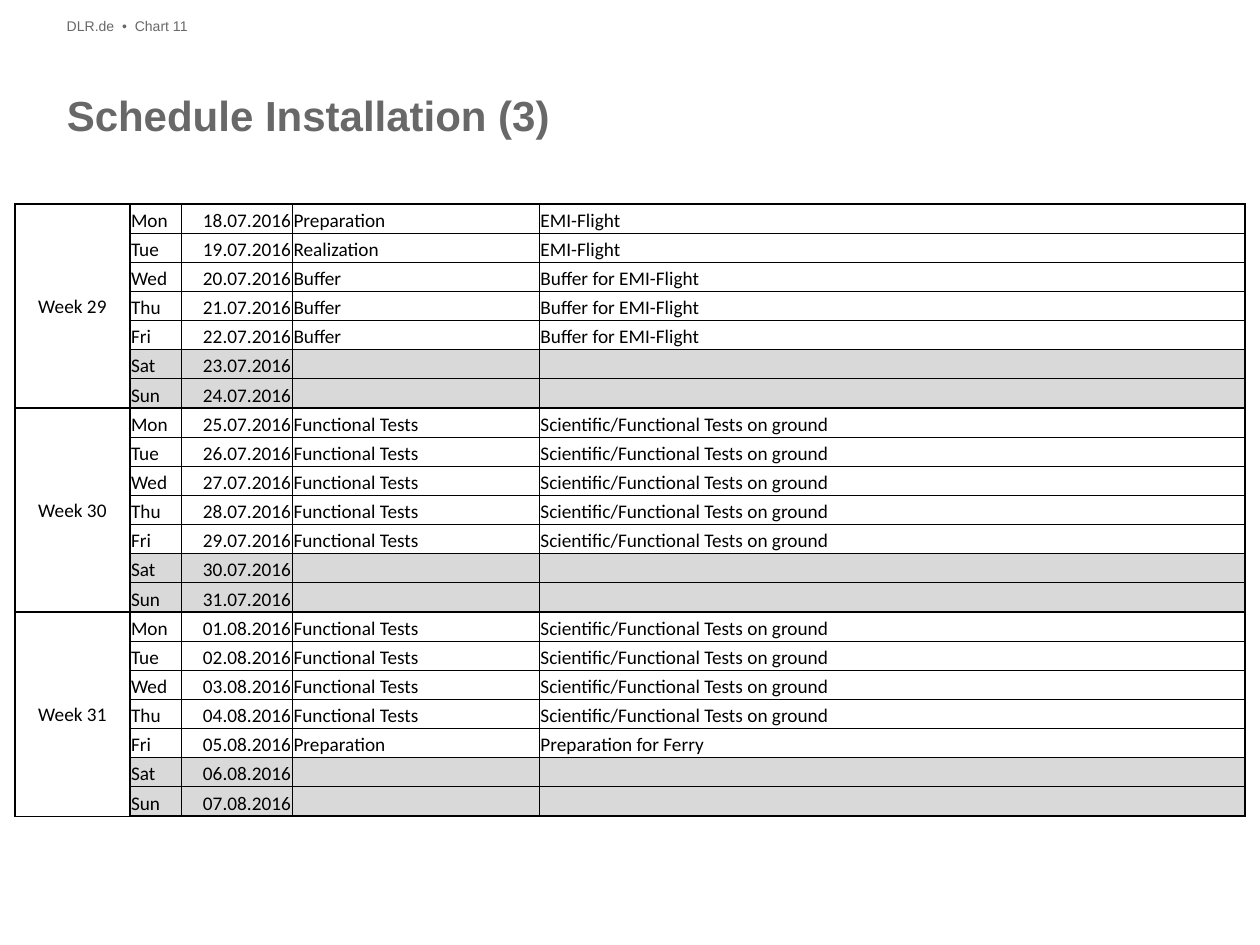
from lxml import etree
from pptx import Presentation
from pptx.dml.color import RGBColor
from pptx.enum.text import MSO_ANCHOR, PP_ALIGN
from pptx.oxml.ns import qn
from pptx.util import Inches, Pt

LEFT, MID, RIGHT = PP_ALIGN.LEFT, PP_ALIGN.CENTER, PP_ALIGN.RIGHT
TOP, CENTRE, BOTTOM = MSO_ANCHOR.TOP, MSO_ANCHOR.MIDDLE, MSO_ANCHOR.BOTTOM

DAYS = ["Mon", "Tue", "Wed", "Thu", "Fri", "Sat", "Sun"]
FREE = [("", "")] * 2
FLIGHT = "EMI-Flight"
BUFFER = ("Buffer", "Buffer for EMI-Flight")
TESTS = ("Functional Tests", "Scientific/Functional Tests on ground")
FERRY = ("Preparation", "Preparation for Ferry")
WEEKS = {
    "Week 29": [("Preparation", FLIGHT), ("Realization", FLIGHT)] + [BUFFER] * 3 + FREE,
    "Week 30": [TESTS] * 5 + FREE,
    "Week 31": [TESTS] * 4 + [FERRY] + FREE,
}
WIDTHS = [0.91, 0.41, 0.88, 1.96, 5.6]
ALIGNS = [MID, LEFT, RIGHT, LEFT, LEFT]
LAST = len(WIDTHS) - 1


def rgb(code):
    return RGBColor.from_string(code)


def date(count):
    day = 18 + count
    return f"{day}.07.2016" if day <= 31 else f"{day - 31:02}.08.2016"


class Deck:
    grey, black, shade = "686868", "000000", "D9D9D9"
    head, body = "Arial", "Calibri"

    def __init__(self, show):
        self.slide = show.slides.add_slide(show.slide_layouts[5])

    def style(self, par, size, face, color, bold=False, align=LEFT):
        par.alignment = align
        for run in par.runs:
            font = run.font
            font.size, font.name, font.bold = Pt(size), face, bold
            font.color.rgb = rgb(color)

    def fill_text(self, box, text, size, bold=False):
        frame = box.text_frame
        frame.margin_left = frame.margin_right = 0
        frame.margin_top = frame.margin_bottom = 0
        frame.vertical_anchor = TOP
        frame.text = text
        self.style(frame.paragraphs[0], size, self.head, self.grey, bold)

    def title(self, text, left, top, width, height):
        box = self.slide.shapes.title
        box.left, box.top = Inches(left), Inches(top)
        box.width, box.height = Inches(width), Inches(height)
        self.fill_text(box, text, 24, True)

    def label(self, text, left, top, width, height):
        box = self.slide.shapes.add_textbox(
            Inches(left), Inches(top), Inches(width), Inches(height))
        box.text_frame.word_wrap = False
        self.fill_text(box, text, 8)

    def border(self, cell, sides):
        props = cell._tc.get_or_add_tcPr()
        for side, points in sides.items():
            line = etree.SubElement(props, qn(f"a:ln{side}"), w=str(Pt(points)))
            paint = etree.SubElement(line, qn("a:solidFill"))
            etree.SubElement(paint, qn("a:srgbClr"), val=self.black)

    def cell(self, cell, text, col, day):
        cell.margin_left = cell.margin_right = cell.margin_top = Inches(0.01)
        cell.margin_bottom = 0
        cell.vertical_anchor = BOTTOM if col else CENTRE
        cell.text = text
        par = cell.text_frame.paragraphs[0]
        self.style(par, 11, self.body, self.black, align=ALIGNS[col])
        if not text:
            etree.SubElement(par._p, qn("a:endParaRPr"), sz="1100")
        thick = {"L": col < 2, "R": col in (0, LAST), "T": day == 0, "B": day == 6}
        self.border(cell, {side: 1 if on else 0.5 for side, on in thick.items()})
        if col and day > 4:
            cell.fill.solid()
            cell.fill.fore_color.rgb = rgb(self.shade)
        else:
            cell.fill.background()

    def plan(self, weeks, left, top, width, height):
        table = self.slide.shapes.add_table(
            len(weeks) * 7, len(WIDTHS), Inches(left), Inches(top),
            Inches(width), Inches(height)).table
        table.first_row = table.horz_banding = False
        for col, size in zip(table.columns, WIDTHS):
            col.width = Inches(size)
        for num, (week, tasks) in enumerate(weeks.items()):
            start = num * 7
            for day, task in enumerate(tasks):
                row = start + day
                table.rows[row].height = Inches(0.24 if day == 6 else 0.23)
                texts = ["" if day else week, DAYS[day], date(row), *task]
                for col, text in enumerate(texts):
                    self.cell(table.cell(row, col), text, col, day)
            table.cell(start, 0).merge(table.cell(start + 6, 0))


def main():
    show = Presentation()
    show.slide_width, show.slide_height = Inches(10), Inches(7.5)
    deck = Deck(show)
    deck.title("Schedule Installation (3)", 0.53, 0.71, 8.94, 0.81)
    deck.label("DLR.de  •  Chart 11", 0.53, 0.14, 1.14, 0.16)
    deck.plan(WEEKS, 0.12, 1.62, 9.76, 4.88)
    show.save("out.pptx")


if __name__ == "__main__":
    main()
